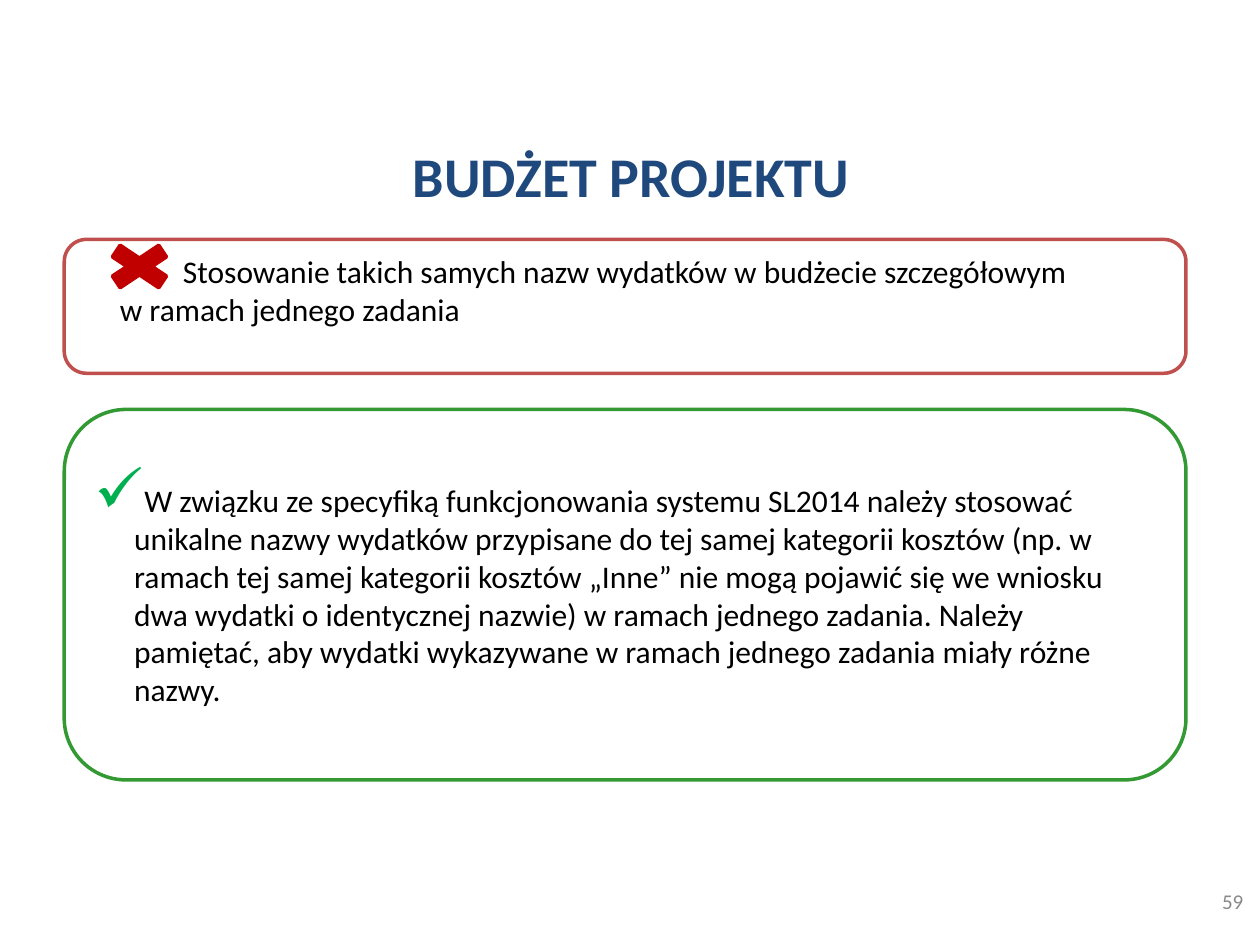
from lxml import etree
from pptx import Presentation
from pptx import util as u
from pptx.dml.color import RGBColor
from pptx.enum import shapes, text
from pptx.oxml.ns import qn

Pt = u.Pt
NAVY = RGBColor(0x1F, 0x49, 0x7D)
RED = RGBColor(0xC0, 0x50, 0x4D)
DARK_RED = RGBColor(0xC0, 0x00, 0x00)
GREEN = RGBColor(0x33, 0x99, 0x33)
CHECK_GREEN = RGBColor(0x00, 0xB0, 0x50)
GREY = RGBColor(0x89, 0x89, 0x89)
BLACK = RGBColor(0, 0, 0)
FONT = "Calibri"

MISTAKE = ("\tStosowanie takich samych nazw wydatków w budżecie szczegółowym \v"
           "w ramach jednego zadania")
ADVICE = ("W związku ze specyfiką funkcjonowania systemu SL2014 należy stosować "
          "unikalne nazwy wydatków przypisane do tej samej kategorii kosztów "
          "(np. w ramach tej samej kategorii kosztów „Inne” nie mogą pojawić się "
          "we wniosku dwa wydatki o identycznej nazwie) w ramach jednego zadania. "
          "Należy pamiętać, aby wydatki wykazywane w ramach jednego zadania miały "
          "różne nazwy.")


def write(shape, content, size, color, align, anchor, bold=False):
    frame = shape.text_frame
    frame.word_wrap = True
    frame.vertical_anchor = anchor
    frame.text = content
    paragraph = frame.paragraphs[0]
    paragraph.alignment = align
    for run in paragraph.runs:
        run.font.name = FONT
        run.font.size = Pt(size)
        run.font.bold = bold
        run.font.color.rgb = color
    return paragraph


def add_label(slide, box, content, size, color, align, bold=False):
    label = slide.shapes.add_textbox(*map(Pt, box))
    write(label, content, size, color, align, text.MSO_ANCHOR.MIDDLE, bold)


def add_shape(slide, kind, box, line_color):
    shape = slide.shapes.add_shape(kind, *map(Pt, box))
    shape.shadow.inherit = False
    shape.fill.background()
    shape.line.color.rgb = line_color
    shape.line.width = Pt(2)
    return shape


def set_indent(paragraph, margin, first_line=0):
    properties = paragraph._p.get_or_add_pPr()
    properties.set("marL", str(Pt(margin)))
    properties.set("indent", str(Pt(first_line)))
    return properties


def add_check_bullet(properties):
    color = etree.SubElement(properties, qn("a:buClr"))
    etree.SubElement(color, qn("a:srgbClr"), val=str(CHECK_GREEN))
    etree.SubElement(properties, qn("a:buSzPct"), val="200000")
    etree.SubElement(properties, qn("a:buChar"), char="✓")


def add_mistake(slide, box):
    left, top, _, _ = box
    panel = add_shape(slide, shapes.MSO_SHAPE.ROUNDED_RECTANGLE, box, RED)
    paragraph = write(panel, MISTAKE, 18, BLACK, text.PP_ALIGN.LEFT, text.MSO_ANCHOR.TOP)
    set_indent(paragraph, 21)
    cross = add_shape(slide, shapes.MSO_SHAPE.MATH_MULTIPLY,
                      (left + 17.5, top - 1.5, 51, 34), DARK_RED)
    cross.fill.solid()
    cross.fill.fore_color.rgb = DARK_RED


def add_advice(slide, box):
    panel = add_shape(slide, shapes.MSO_SHAPE.ROUNDED_RECTANGLE, box, GREEN)
    paragraph = write(panel, ADVICE, 18, BLACK, text.PP_ALIGN.LEFT, text.MSO_ANCHOR.MIDDLE)
    add_check_bullet(set_indent(paragraph, 22.5, -22.5))


def main():
    presentation = Presentation()
    presentation.slide_width = Pt(720)
    presentation.slide_height = Pt(540)
    slide = presentation.slides.add_slide(presentation.slide_layouts[6])
    left, width = 36.7, 641
    add_label(slide, (left, 83, 648, 34.5), "BUDŻET PROJEKTU", 32, NAVY,
              text.PP_ALIGN.CENTER, bold=True)
    add_mistake(slide, (left, 136.8, width, 76.5))
    add_advice(slide, (left, 234, width, 211.7))
    add_label(slide, (549.5, 500.5, 168, 28.75), "59", 12, GREY, text.PP_ALIGN.RIGHT)
    presentation.save("out.pptx")


if __name__ == "__main__":
    main()
